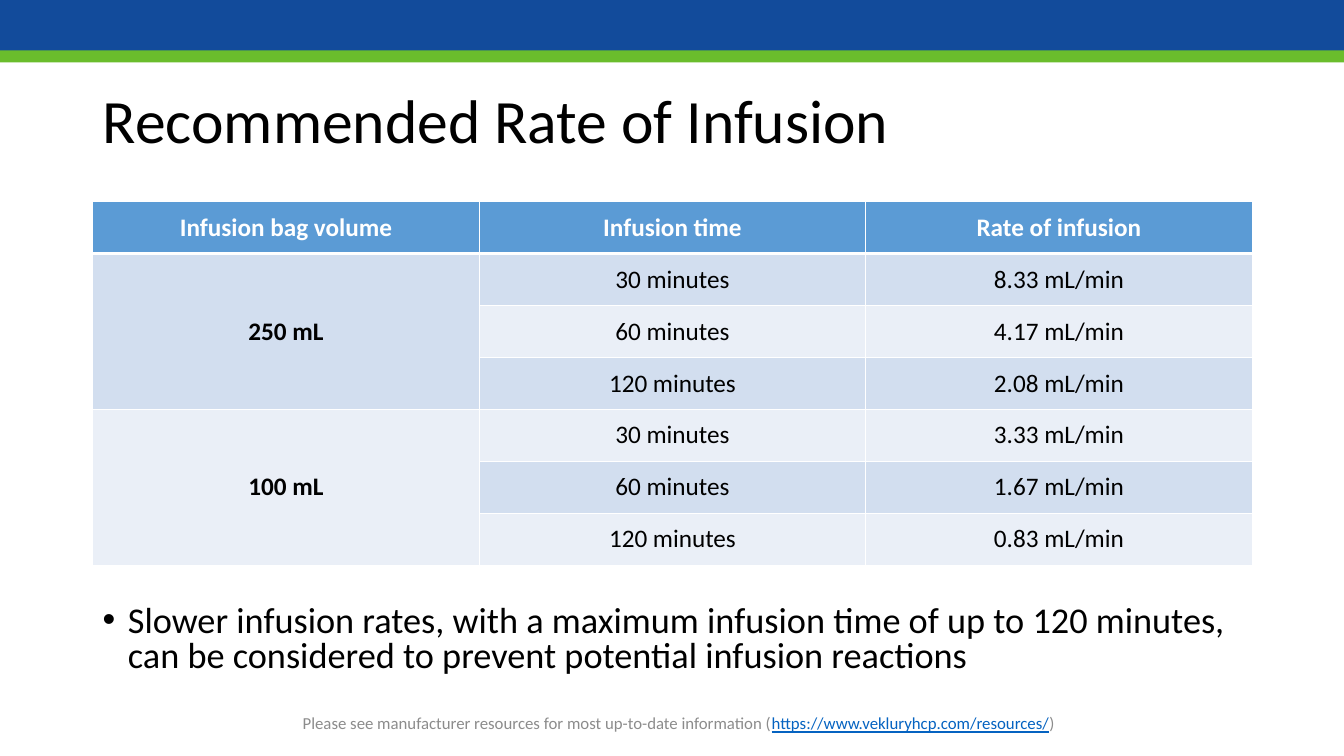
"""Build the slide on recommended infusion rates."""
import dataclasses

import pptx
import pptx.dml.color
import pptx.enum.shapes
import pptx.enum.text
import pptx.oxml
import pptx.oxml.ns
import pptx.util

Inches = pptx.util.Inches
Pt = pptx.util.Pt
RGB = pptx.dml.color.RGBColor.from_string
PP_ALIGN = pptx.enum.text.PP_ALIGN
MIDDLE = pptx.enum.text.MSO_ANCHOR.MIDDLE


@dataclasses.dataclass(frozen=True)
class Theme:
    font: str = "Calibri"
    blue: str = "124B9B"
    green: str = "6ABD2C"
    header: str = "5B9BD5"
    bands: tuple = ("D2DEEF", "EAEFF7")
    text: str = "000000"
    white: str = "FFFFFF"
    grey: str = "8C8C8C"
    link: str = "0563C1"
    title_size: float = 44
    body_size: float = 25.9
    table_size: float = 18
    note_size: float = 12


theme = Theme()


def add_run(p, text, size, color, bold=False, underline=False):
    r = p.add_run()
    r.text = text
    r.font.name = theme.font
    r.font.size = Pt(size)
    r.font.bold = bold
    r.font.underline = underline
    r.font.color.rgb = RGB(color)


def set_borders(cell, top, bottom):
    tcPr = cell._tc.get_or_add_tcPr()
    for i, (side, width) in enumerate((("L", 1), ("R", 1), ("T", top), ("B", bottom))):
        tcPr.insert(i, pptx.oxml.parse_xml(
            f'<a:ln{side} {pptx.oxml.ns.nsdecls("a")} w="{Pt(width)}"><a:solidFill>'
            f'<a:srgbClr val="{theme.white}"/></a:solidFill></a:ln{side}>'))


prs = pptx.Presentation()
prs.slide_width = Inches(13.33)
prs.slide_height = Inches(7.5)
s = prs.slides.add_slide(prs.slide_layouts.get_by_name("Title Only"))

for top, height, color in ((0, 0.51, theme.blue), (0.5, 0.12, theme.green)):
    sp = s.shapes.add_shape(pptx.enum.shapes.MSO_SHAPE.RECTANGLE,
                            0, Inches(top), prs.slide_width, Inches(height))
    sp.shadow.inherit = False
    sp.fill.solid()
    sp.fill.fore_color.rgb = RGB(color)
    sp.line.fill.background()

title = s.shapes.title
title.left, title.top = Inches(0.92), Inches(0.6)
title.width, title.height = Inches(11.5), Inches(1.25)
title.text_frame.vertical_anchor = MIDDLE
p = title.text_frame.paragraphs[0]
p.alignment = PP_ALIGN.LEFT
p.line_spacing = 0.9
add_run(p, "Recommended Rate of Infusion", theme.title_size, theme.text)

rows = [
    ("Infusion bag volume", "Infusion time", "Rate of infusion"),
    ("250 mL", "30 minutes", "8.33 mL/min"),
    ("", "60 minutes", "4.17 mL/min"),
    ("", "120 minutes", "2.08 mL/min"),
    ("100 mL", "30 minutes", "3.33 mL/min"),
    ("", "60 minutes", "1.67 mL/min"),
    ("", "120 minutes", "0.83 mL/min"),
]
table = s.shapes.add_table(len(rows), 3, Inches(0.92), Inches(2),
                           Inches(11.5), Inches(3.61)).table
for i, row in enumerate(rows):
    for j, text in enumerate(row):
        cell = table.cell(i, j)
        cell.vertical_anchor = MIDDLE
        cell.fill.solid()
        cell.fill.fore_color.rgb = RGB(theme.bands[(i - 1) % 2] if i else theme.header)
        set_borders(cell, 3 if i == 1 else 1, 3 if i == 0 else 1)
        if text:
            p = cell.text_frame.paragraphs[0]
            p.alignment = PP_ALIGN.CENTER
            add_run(p, text, theme.table_size, theme.text if i else theme.white,
                    bold=i == 0 or j == 0)
for first in (1, 4):
    table.cell(first, 0).merge(table.cell(first + 2, 0))

tf = s.shapes.add_textbox(Inches(0.92), Inches(5.96), Inches(11.5), Inches(0.81)).text_frame
tf.word_wrap = True
p = tf.paragraphs[0]
pPr = p._p.get_or_add_pPr()
pPr.set("marL", str(Inches(0.25)))
pPr.set("indent", str(Inches(-0.25)))
for bullet in ('buFont {} typeface="Arial"', 'buChar {} char="•"'):
    pPr.append(pptx.oxml.parse_xml(
        f'<a:{bullet.format(pptx.oxml.ns.nsdecls("a"))}/>'))
p.line_spacing = 0.8
add_run(p, "Slower infusion rates, with a maximum infusion time of up to 120 minutes, "
        "can be considered to prevent potential infusion reactions",
        theme.body_size, theme.text)

tf = s.shapes.add_textbox(Inches(2.43), Inches(7.07), Inches(8.6), Inches(0.21)).text_frame
tf.word_wrap = True
tf.vertical_anchor = MIDDLE
p = tf.paragraphs[0]
p.alignment = PP_ALIGN.CENTER
add_run(p, "Please see manufacturer resources for most up-to-date information (",
        theme.note_size, theme.grey)
add_run(p, "https://www.vekluryhcp.com/resources/", theme.note_size, theme.link, underline=True)
add_run(p, ")", theme.note_size, theme.grey)

prs.save("out.pptx")
